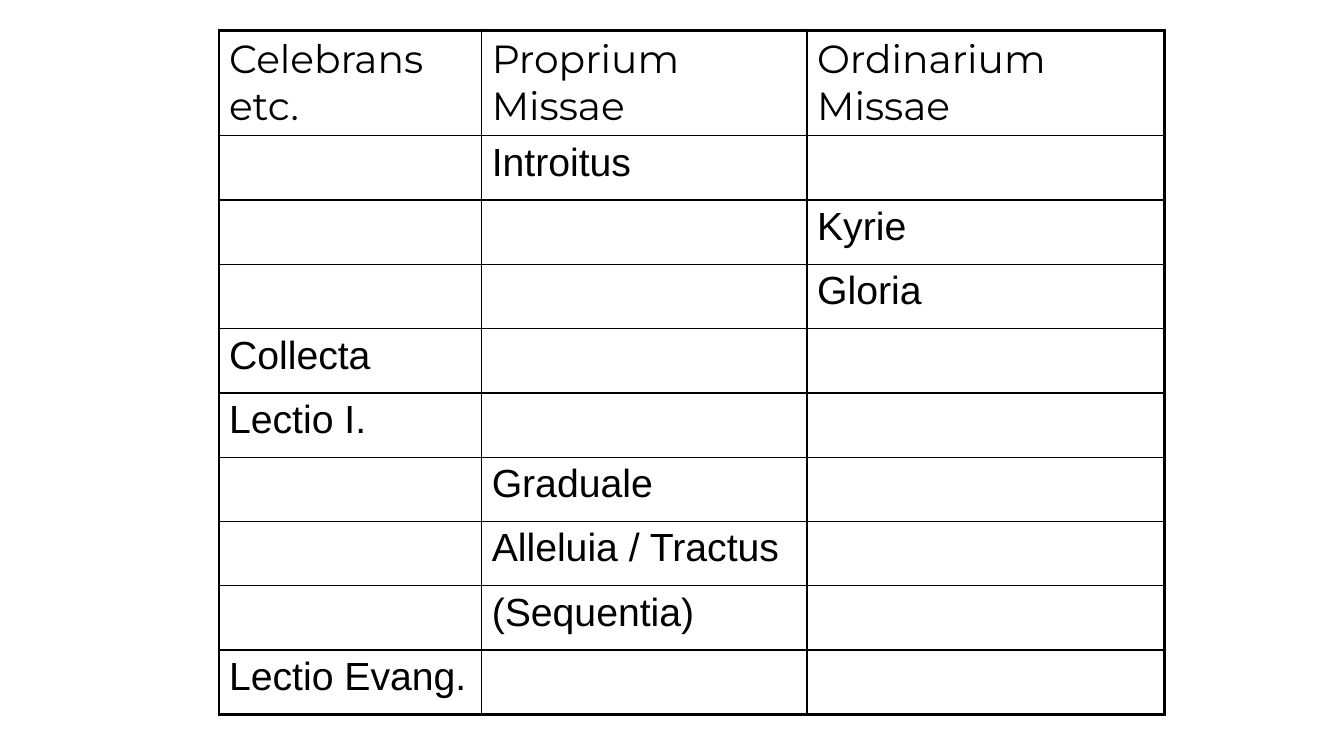
import pptx
import pptx.dml.color
import pptx.oxml
import pptx.oxml.ns
import pptx.util
from lxml import etree

Cm = pptx.util.Cm
Pt = pptx.util.Pt
qn = pptx.oxml.ns.qn
BLACK = pptx.dml.color.RGBColor(0, 0, 0)

COLS = [6.62, 8.2, 9]
HEAD = 2.64
ROW = 1.62
THICK = 2.25
THIN = 1
PARTS = [
    ["Celebrans etc.", "Proprium Missae", "Ordinarium Missae"],
    ["", "Introitus", ""],
    ["", "", "Kyrie"],
    ["", "", "Gloria"],
    ["Collecta", "", ""],
    ["Lectio I.", "", ""],
    ["", "Graduale", ""],
    ["", "Alleluia / Tractus", ""],
    ["", "(Sequentia)", ""],
    ["Lectio Evang.", "", ""],
]


def write(frame, text, font="Arial", size=28, color=BLACK):
    para = frame.paragraphs[0]
    props = para._p.get_or_add_pPr()
    space = etree.SubElement(props, qn("a:spcBef"))
    etree.SubElement(space, qn("a:spcPct"), val="20000")
    run = para.add_run()
    run.text = text
    run.font.name = font
    run.font.size = Pt(size)
    run.font.color.rgb = color


class Page:
    def __init__(self, deck, color=BLACK):
        self.slide = deck.slides.add_slide(deck.slide_layouts[6])
        self.color = color

    def edge(self, cell, side, width):
        props = cell._tc.get_or_add_tcPr()
        line = etree.SubElement(props, qn("a:ln" + side), w=str(Pt(width)))
        fill = etree.SubElement(line, qn("a:solidFill"))
        etree.SubElement(fill, qn("a:srgbClr"), val=str(self.color))

    def table(self, left, top, cols, heights, rows):
        frame = self.slide.shapes.add_table(
            len(rows), len(cols), Cm(left), Cm(top),
            Cm(sum(cols)), Cm(sum(heights)))
        grid = frame.table
        grid.first_row = False
        grid.horz_banding = False
        for col, width in zip(grid.columns, cols):
            col.width = Cm(width)
        for row, height in zip(grid.rows, heights):
            row.height = Cm(height)
        for r, texts in enumerate(rows):
            for c, text in enumerate(texts):
                cell = grid.cell(r, c)
                outer = {"L": c == 0, "R": c == len(cols) - 1,
                         "T": r == 0, "B": r == len(rows) - 1}
                for side, thick in outer.items():
                    self.edge(cell, side, THICK if thick else THIN)
                cell.fill.background()
                if text:
                    font = "Montserrat" if r == 0 else "Arial"
                    write(cell.text_frame, text, font=font, color=self.color)


def main():
    deck = pptx.Presentation()
    deck.slide_width = Cm(33.87)
    deck.slide_height = Cm(19.05)
    page = Page(deck)
    heights = [HEAD] + [ROW] * (len(PARTS) - 1)
    page.table(5.52, 0.76, COLS, heights, PARTS)
    deck.save("out.pptx")


if __name__ == "__main__":
    main()
